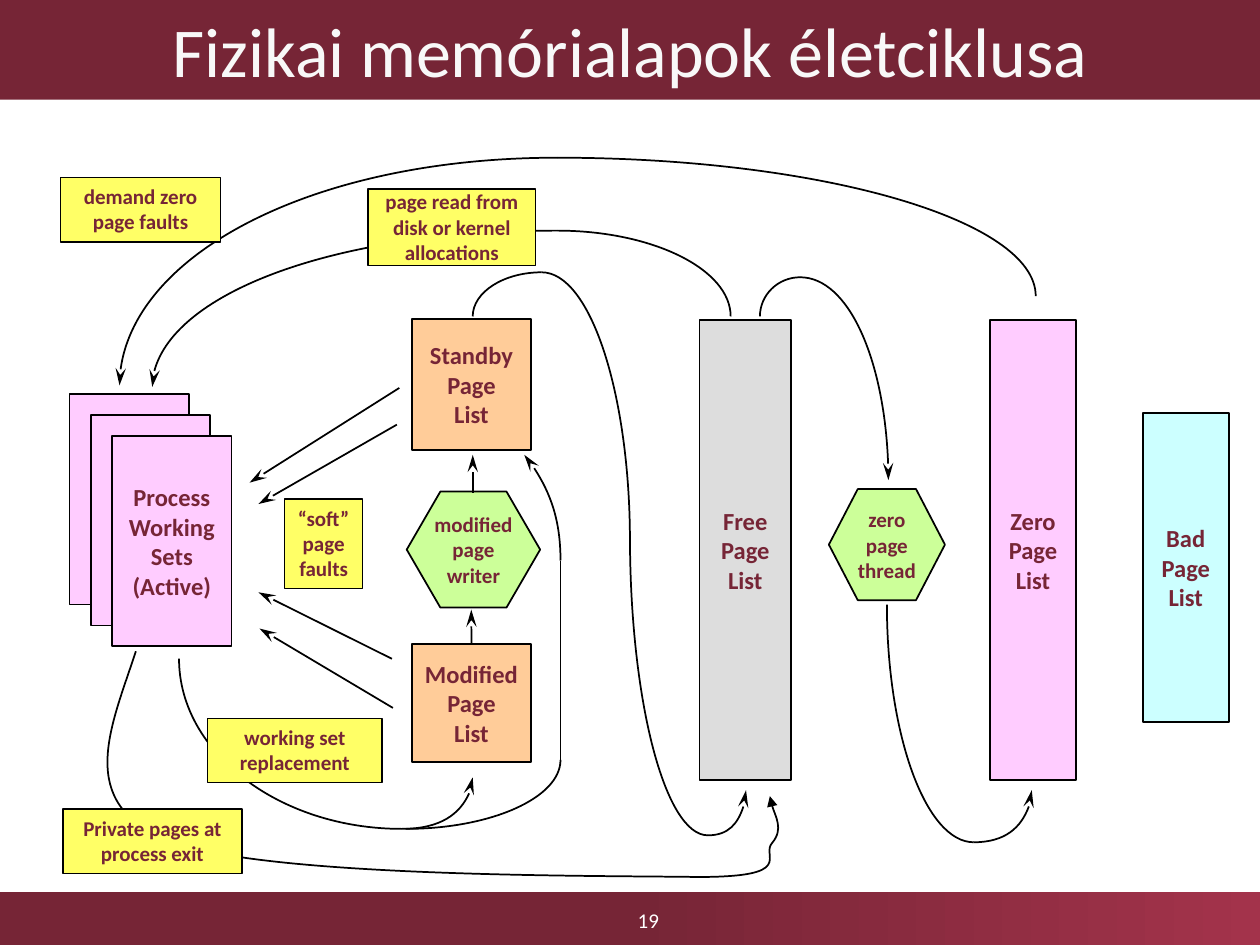
from dataclasses import dataclass

from lxml import etree
from pptx import Presentation
from pptx.dml.color import RGBColor
from pptx.enum.shapes import MSO_CONNECTOR, MSO_SHAPE
from pptx.enum.text import MSO_ANCHOR, MSO_AUTO_SIZE, PP_ALIGN
from pptx.oxml.ns import qn
from pptx.util import Cm, Pt

RECT, HEXAGON = MSO_SHAPE.RECTANGLE, MSO_SHAPE.HEXAGON
STRAIGHT = MSO_CONNECTOR.STRAIGHT
TOP, MIDDLE = MSO_ANCHOR.TOP, MSO_ANCHOR.MIDDLE
CENTER = PP_ALIGN.CENTER
GROW = MSO_AUTO_SIZE.SHAPE_TO_FIT_TEXT
TITLE_ONLY = 5
QUARTER = 0.55  # Bezier handle length of a quarter ellipse


@dataclass(frozen=True)
class Theme:
    font: str = "Calibri"
    wine: str = "762536"
    wine_light: str = "A3334B"
    title_text: str = "F8F8F8"
    white: str = "FFFFFF"
    black: str = "000000"
    orange: str = "FFCC99"
    pink: str = "FFCCFF"
    gray: str = "DDDDDD"
    green: str = "CCFF99"
    cyan: str = "CCFFFF"
    yellow: str = "FFFF66"
    title_size: int = 40
    list_size: int = 14
    small_size: int = 12


def set_all(target, values):
    for name, value in values.items():
        setattr(target, name, value)


class LifecycleSlide:
    def __init__(self, slide, theme):
        self.slide, self.theme = slide, theme
        self.shapes = slide.shapes

    def label(self, frame, text, size, color, bold=False, **layout):
        frame.text = text
        set_all(frame, {"vertical_anchor": MIDDLE, **layout})
        for paragraph in frame.paragraphs:
            paragraph.alignment = CENTER
            set_all(paragraph.font, {"name": self.theme.font, "size": Pt(size), "bold": bold})
            paragraph.font.color.rgb = RGBColor.from_string(color)

    def paint(self, shape, fill):
        shape.fill.solid()
        shape.fill.fore_color.rgb = RGBColor.from_string(fill)

    def stroke(self, shape, width=1.0):
        shape.line.width = Pt(width)
        shape.line.color.rgb = RGBColor.from_string(self.theme.black)

    def arrowhead(self, shape, kind):
        if kind:
            length = "lg" if kind == "stealth" else "med"
            line = shape._element.spPr.find(qn("a:ln"))
            etree.SubElement(line, qn("a:tailEnd"), type=kind, w="med", len=length)

    def title(self, text):
        title = self.shapes.title
        set_all(title, {"left": 0, "top": 0, "width": Cm(25.4), "height": Cm(2.01)})
        self.paint(title, self.theme.wine)
        self.label(title.text_frame, text, self.theme.title_size, self.theme.title_text)

    def footer(self, number):
        bar = self.shapes.add_shape(RECT, 0, Cm(17.98), Cm(25.4), Cm(1.07))
        bar.shadow.inherit = False
        bar.line.fill.background()
        bar.fill.gradient()
        bar.fill.gradient_angle = 0
        stops = ((0.5, self.theme.wine), (1, self.theme.wine_light))
        for stop, (position, color) in zip(bar.fill.gradient_stops, stops):
            stop.position = position
            stop.color.rgb = RGBColor.from_string(color)
        box = self.shapes.add_textbox(Cm(8.94), Cm(18.06), Cm(8.26), Cm(0.99))
        self.label(box.text_frame, number, self.theme.small_size, self.theme.white, word_wrap=True)

    def box(self, place, fill, text="", size=None, kind=RECT, width=1.0, **layout):
        shape = self.shapes.add_shape(kind, *map(Cm, place))
        shape.shadow.inherit = False
        self.paint(shape, fill)
        self.stroke(shape, width)
        if text:
            self.label(shape.text_frame, text, size or self.theme.list_size,
                       self.theme.wine, True, **{"word_wrap": False, **layout})
        return shape

    def hexagon(self, place, text, slant):
        shape = self.box(place, self.theme.green, text, self.theme.small_size, HEXAGON)
        shape.adjustments[0] = slant

    def note(self, place, text, **layout):
        self.box(place, self.theme.yellow, text, self.theme.small_size, width=0.75,
                 **{"vertical_anchor": TOP, "word_wrap": True, "auto_size": GROW, **layout})

    def curve(self, points, head=None):
        """Bezier chain: a start point, then three points per segment."""
        start, *rest = [(Cm(x), Cm(y)) for x, y in points]
        builder = self.shapes.build_freeform(*start)
        builder.add_line_segments(rest, close=False)
        shape = builder.convert_to_shape()
        steps = list(shape._element.iter(qn("a:lnTo")))
        for first, second, third in zip(steps[::3], steps[1::3], steps[2::3]):
            bend = etree.SubElement(first.getparent(), qn("a:cubicBezTo"))
            for step in (first, second, third):
                bend.append(step[0])
                step.getparent().remove(step)
        shape.shadow.inherit = False
        shape.fill.background()
        self.stroke(shape)
        self.arrowhead(shape, head)

    def arc(self, apex, side, head=None):
        """Quarter ellipse, level at the apex and upright at the side."""
        (ax, ay), (sx, sy) = apex, side
        self.curve([apex, (ax + QUARTER * (sx - ax), ay),
                    (sx, sy + QUARTER * (ay - sy)), side], head)

    def straight(self, start, end, head="stealth"):
        line = self.shapes.add_connector(STRAIGHT, *map(Cm, start + end))
        self.stroke(line)
        etree.SubElement(line._element.spPr, qn("a:effectLst"))
        self.arrowhead(line, head)
        return line


def main():
    theme = Theme()
    deck = Presentation()
    set_all(deck, {"slide_width": Cm(25.4), "slide_height": Cm(19.05)})
    page = LifecycleSlide(deck.slides.add_slide(deck.slide_layouts[TITLE_ONLY]), theme)

    page.title("Fizikai memórialapok életciklusa")
    page.footer("19")

    # Page lists
    page.box((8.31, 6.43, 2.39, 2.64), theme.orange, "Standby\nPage\nList")
    modified_list = page.box((8.31, 12.98, 2.39, 2.39), theme.orange, "Modified\nPage\nList")
    page.box((14.1, 6.45, 1.85, 9.27), theme.gray, "Free\nPage\nList")
    page.box((19.96, 6.45, 1.73, 9.27), theme.pink, "Zero\nPage\nList")
    page.box((23.04, 8.33, 1.73, 6.22), theme.cyan, "Bad\nPage\nList")

    # Stack of working sets, labelled on the front one
    for level, label in enumerate(("", "", "Process\nWorking\nSets\n(Active)")):
        page.box((1.4 + 0.43 * level, 7.95 + 0.42 * level, 2.41, 4.24), theme.pink, label)

    # System threads
    page.hexagon((8.2, 9.91, 2.69, 2.34), "modified\npage\nwriter", 0.29)
    page.hexagon((16.71, 9.86, 2.34, 2.24), "zero\npage\nthread", 0.26)

    # Curved flows: apex, plain side, arrow side
    for apex, plain_side, arrow_side in (
        ((11.23, 4.65), (14.73, 6.38), (3.07, 7.8)),      # free list to working sets
        ((11.23, 3.18), (20.88, 5.97), (2.41, 7.77)),     # zero list to working sets
        ((8.1, 16.71), (3.61, 13.28), (9.53, 15.67)),     # working sets to modified list
        ((14.27, 16.84), (12.7, 10.8), (15.04, 15.93)),   # standby list to free list
        ((16.13, 5.59), (15.32, 6.38), (17.91, 9.68)),    # free list to zero thread
        ((19.63, 16.98), (17.88, 12.19), (20.8, 15.93)),  # zero thread to zero list
    ):
        page.arc(apex, plain_side)
        page.arc(apex, arrow_side, "stealth")
    for side in ((9.53, 6.38), (12.7, 10.92)):            # out of the standby list
        page.arc((10.92, 5.49), side)

    # Working sets to standby list
    page.arc((8.18, 16.71), (11.3, 15.32))
    page.straight((11.3, 15.32), (11.3, 11.3), None)
    page.curve([(11.3, 11.3), (11.3, 10.49), (11.02, 9.7), (10.57, 9.17)], "stealth")

    # Process exit to free list
    page.curve([(2.74, 13.13), (2.24, 14.66), (1.5, 16.18), (3.38, 16.94),
                (5.28, 17.7), (12.04, 17.65), (14.07, 17.68),
                (16.1, 17.68), (15.32, 17.25), (15.57, 16.99),
                (15.8, 16.71), (15.54, 16.28), (15.52, 16.05)], "triangle")

    # Soft faults and the modified page writer
    for start, end in (
        ((8.05, 7.82), (5.03, 9.73)),
        ((8.0, 8.56), (5.21, 10.16)),
        ((7.9, 13.28), (5.21, 11.94)),
        ((7.92, 14.27), (5.23, 12.67)),
        ((9.53, 9.93), (9.53, 9.17)),
    ):
        page.straight(start, end)
    page.straight((9.5, 12.98), (9.5, 12.29)).begin_connect(modified_list, 0)

    # Notes on the flows
    page.note((7.42, 3.81, 3.38, 1.55), "page read from disk or kernel allocations",
              margin_left=Cm(0.13), margin_right=Cm(0.13), margin_top=0, margin_bottom=0)
    page.note((1.22, 3.58, 3.23, 1.3), "demand zero page faults")
    page.note((4.19, 14.48, 3.51, 1.3), "working set replacement")
    page.note((5.74, 10.06, 1.57, 1.8), "“soft”\npage\nfaults", word_wrap=False)
    page.note((1.27, 16.31, 3.61, 1.3), "Private pages at process exit")

    deck.save("out.pptx")


if __name__ == "__main__":
    main()
